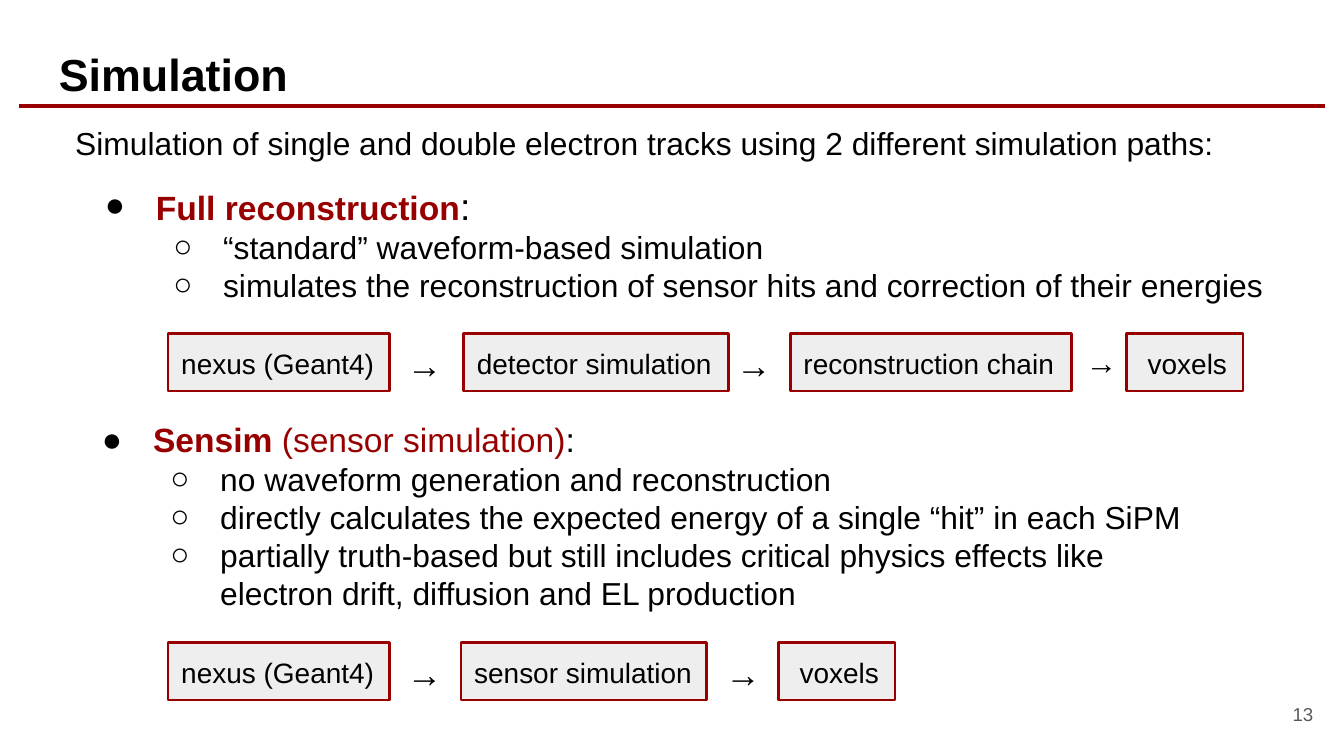
from typing import NamedTuple

from lxml.etree import SubElement
from pptx import Presentation
from pptx.dml.color import RGBColor
from pptx.enum.shapes import MSO_CONNECTOR, MSO_SHAPE
from pptx.enum.text import MSO_ANCHOR, PP_ALIGN
from pptx.oxml.ns import qn
from pptx.util import Inches, Pt

COLORS = {"black": "000000", "red": "980000", "box": "EEEEEE", "grey": "595959"}
FONT = "Arial"
BOX_H = 0.43


class Span(NamedTuple):
    text: str
    size: float
    color: str = "black"
    bold: bool = False


class Para(NamedTuple):
    spans: list[Span]
    level: int | None = None  # None means no bullet


class Box(NamedTuple):
    text: str
    left: float
    width: float
    pad_left: float = 0.1
    pad_right: float = 0.1


class Arrow(NamedTuple):
    left: float
    size: float = 19
    width: float = 0.46
    height: float = 0.49


class Flow(NamedTuple):
    top: float
    boxes: list[Box]
    arrows: list[Arrow]


def rgb(name: str) -> RGBColor:
    return RGBColor.from_string(COLORS[name])


def add_bullet(p, level: int, size: float) -> None:
    pPr = p._p.get_or_add_pPr()
    margin, hang = ((0.5, 0.38), (1, 0.37))[level]
    pPr.set("marL", str(Inches(margin)))
    pPr.set("indent", str(-Inches(hang)))
    color = SubElement(pPr, qn("a:buClr"))
    SubElement(color, qn("a:srgbClr"), val=COLORS["black"])
    SubElement(pPr, qn("a:buSzPts"), val=str(int(size * 100)))
    SubElement(pPr, qn("a:buFont"), typeface=FONT)
    SubElement(pPr, qn("a:buChar"), char="●○"[level])


def write(sp, paras: list[Para], pad: float = 0.1) -> None:
    tf = sp.text_frame
    tf.word_wrap = True
    tf.vertical_anchor = MSO_ANCHOR.TOP
    tf.margin_left = tf.margin_right = tf.margin_top = tf.margin_bottom = Inches(pad)
    for i, para in enumerate(paras):
        p = tf.add_paragraph() if i else tf.paragraphs[0]
        p.alignment = PP_ALIGN.LEFT
        if para.level is not None:
            p.level = para.level
            add_bullet(p, para.level, para.spans[0].size)
        for span in para.spans:
            r = p.add_run()
            r.text = span.text
            r.font.name = FONT
            r.font.size = Pt(span.size)
            r.font.bold = span.bold
            r.font.color.rgb = rgb(span.color)


def add_text(s, at: tuple[float, ...], paras: list[Para], pad: float = 0.1):
    sp = s.shapes.add_textbox(*map(Inches, at))
    write(sp, paras, pad)
    return sp


def add_box(s, box: Box, top: float) -> None:
    sp = s.shapes.add_shape(MSO_SHAPE.RECTANGLE, Inches(box.left), Inches(top),
                            Inches(box.width), Inches(BOX_H))
    sp.shadow.inherit = False
    sp.fill.solid()
    sp.fill.fore_color.rgb = rgb("box")
    sp.line.color.rgb = rgb("red")
    sp.line.width = Pt(1.5)
    write(sp, [Para([Span(box.text, 15)])])
    sp.text_frame.margin_left = Inches(box.pad_left)
    sp.text_frame.margin_right = Inches(box.pad_right)


def add_flow(s, flow: Flow) -> None:
    for box in flow.boxes:
        add_box(s, box, flow.top)
    for arrow in flow.arrows:
        add_text(s, (arrow.left, flow.top - 0.03, arrow.width, arrow.height),
                 [Para([Span("→", arrow.size)])])


def add_rule(s) -> None:
    line = s.shapes.add_connector(MSO_CONNECTOR.STRAIGHT, Inches(0.14), Inches(0.79),
                                  Inches(9.86), Inches(0.79))
    line.line.color.rgb = rgb("red")
    line.line.width = Pt(2.25)
    SubElement(line._element.spPr, qn("a:effectLst"))


def sub_points(*texts: str) -> list[Para]:
    return [Para([Span(text, 17)], 1) for text in texts]


def voxels(left: float) -> Box:
    return Box("voxels", left, 0.87, 0.16, 0.05)


NEXUS = Box("nexus (Geant4)", 1.25, 1.65)
FULL = [Para([Span("Full reconstruction", 18, "red", True), Span(":", 20)], 0)] + sub_points(
    "“standard” waveform-based simulation",
    "simulates the reconstruction of sensor hits and correction of their energies",
)
SENSIM = [Para([Span("Sensim ", 18, "red", True), Span("(sensor simulation)", 18, "red"),
                Span(":", 18)], 0)] + sub_points(
    "no waveform generation and reconstruction",
    "directly calculates the expected energy of a single “hit” in each SiPM",
    "partially truth-based but still includes critical physics effects like "
    "electron drift, diffusion and EL production",
)
FLOWS = [
    Flow(2.48,
         [NEXUS, Box("detector simulation", 3.45, 1.97),
          Box("reconstruction chain", 5.88, 2.09), voxels(8.38)],
         [Arrow(2.93), Arrow(5.38), Arrow(7.98, 17, 0.6, 0.38)]),
    Flow(4.78,
         [NEXUS, Box("sensor simulation", 3.43, 1.83), voxels(5.79)],
         [Arrow(2.93), Arrow(5.3)]),
]


def main() -> None:
    prs = Presentation()
    prs.slide_width, prs.slide_height = Inches(10), Inches(10 * 9 / 16)
    s = prs.slides.add_slide(prs.slide_layouts[6])

    add_text(s, (0.34, 0.25, 6.66, 0.66), [Para([Span("Simulation", 24, bold=True)])])
    add_rule(s)
    intro = "Simulation of single and double electron tracks using 2 different simulation paths:"
    add_text(s, (0.54, 0.9, 8.84, 0.33), [Para([Span(intro, 17)])], 0.02)
    add_text(s, (0.64, 1.34, 8.84, 1.23), FULL, 0.02)
    add_text(s, (0.54, 3.02, 8.59, 1.62), SENSIM)
    for flow in FLOWS:
        add_flow(s, flow)

    number = add_text(s, (9.27, 5.1, 0.6, 0.43), [Para([Span("13", 10, "grey")])])
    number.text_frame.vertical_anchor = MSO_ANCHOR.MIDDLE
    number.text_frame.paragraphs[0].alignment = PP_ALIGN.RIGHT

    prs.save("out.pptx")


if __name__ == "__main__":
    main()
